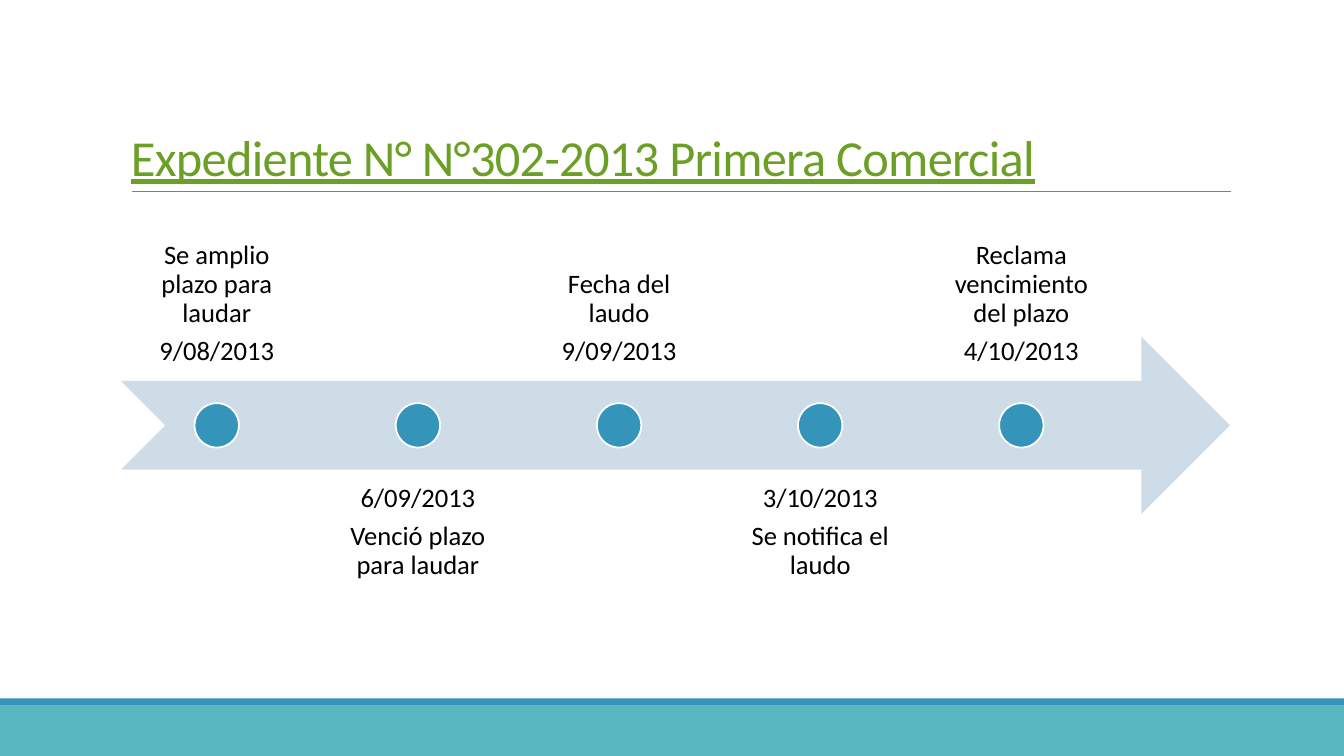
from pptx import Presentation
from pptx.dml.color import RGBColor
from pptx.enum import shapes, text
from pptx.oxml.ns import qn
from pptx.util import Inches, Pt

COLORS = {
    "band": "58B6C0",
    "accent": "3494BA",
    "arrow": "CEDCE7",
    "rule": "808080",
    "title": "6B9F25",
    "text": "000000",
    "outline": "FFFFFF",
}
KIND = shapes.MSO_SHAPE
ANCHOR = text.MSO_ANCHOR

# Date, event, and whether the label sits above the arrow
MILESTONES = [
    ("9/08/2013", "Se amplio plazo para laudar", True),
    ("6/09/2013", "Venció plazo para laudar", False),
    ("9/09/2013", "Fecha del laudo", True),
    ("3/10/2013", "Se notifica el laudo", False),
    ("4/10/2013", "Reclama vencimiento del plazo", True),
]
LEFT, LABEL_WIDTH, LABEL_HEIGHT = 1.2, 1.9, 1.76
STEP = LABEL_WIDTH * 1.05
ABOVE_TOP, BELOW_TOP = 2.02, 4.66
DOT_TOP, DOT_SIZE = 4, 0.44


def color(name):
    return RGBColor.from_string(COLORS[name])


def set_all(target, values):
    for name, value in values.items():
        setattr(target, name, value)


def add_figure(page, kind, area, fill, outline=None):
    figure = page.shapes.add_shape(kind, *map(Inches, area))
    figure.shadow.inherit = False
    figure.fill.solid()
    figure.fill.fore_color.rgb = color(fill)
    if outline:
        figure.line.color.rgb = color(outline)
        figure.line.width = Pt(1.25)
    else:
        figure.line.fill.background()


def add_rule(page, start, end):
    rule = page.shapes.add_connector(
        shapes.MSO_CONNECTOR.STRAIGHT, *map(Inches, start + end))
    rule.line.color.rgb = color("rule")
    rule.line.width = Pt(0.5)
    properties = rule._element.spPr
    properties.append(properties.makeelement(qn("a:effectLst"), {}))


def add_text(page, area, lines, frame_format, para_format, font_format, ink):
    box = page.shapes.add_textbox(*map(Inches, area))
    frame = box.text_frame
    set_all(frame, {"word_wrap": True, **frame_format})
    for index, line in enumerate(lines):
        para = frame.paragraphs[0] if index == 0 else frame.add_paragraph()
        set_all(para, para_format)
        if index:
            para.space_before = Pt(6.65)
        span = para.add_run()
        span.text = line
        set_all(span.font, {"name": "Calibri", **font_format})
        span.font.color.rgb = color(ink)
    return box


def add_title(page, wording):
    box = add_text(page, (LEFT, 0.31, 11, 1.59), [wording],
                   {"vertical_anchor": ANCHOR.BOTTOM}, {"line_spacing": 0.85},
                   {"size": Pt(36), "underline": True}, "title")
    span = box.text_frame.paragraphs[0].runs[0]
    span.font._element.set("spc", "-50")


def add_milestone(page, index, date, event, above):
    left = LEFT + index * STEP
    inset = Inches(0.15)
    frame_format = {
        "vertical_anchor": ANCHOR.BOTTOM if above else ANCHOR.TOP,
        "margin_left": inset, "margin_right": inset,
        "margin_top": inset, "margin_bottom": inset,
    }
    add_text(page,
             (left, ABOVE_TOP if above else BELOW_TOP, LABEL_WIDTH, LABEL_HEIGHT),
             [event, date] if above else [date, event], frame_format,
             {"alignment": text.PP_ALIGN.CENTER, "line_spacing": 0.9},
             {"size": Pt(19)}, "text")
    dot_left = left + (LABEL_WIDTH - DOT_SIZE) / 2
    add_figure(page, KIND.OVAL, (dot_left, DOT_TOP, DOT_SIZE, DOT_SIZE),
               "accent", "outline")


def main():
    deck = Presentation()
    set_all(deck, {"slide_width": Inches(13.33), "slide_height": Inches(7.5)})
    page = deck.slides.add_slide(deck.slide_layouts[6])

    # Footer bands
    add_figure(page, KIND.RECTANGLE, (0, 7, 13.33, 0.5), "band")
    add_figure(page, KIND.RECTANGLE, (0, 6.93, 13.33, 0.07), "accent")

    # Title and its rule
    add_rule(page, (1.31, 1.9), (12.21, 1.9))
    add_title(page, "Expediente N° N°302-2013 Primera Comercial")

    # Timeline
    add_figure(page, KIND.NOTCHED_RIGHT_ARROW, (LEFT, 3.34, 11, 1.76), "arrow")
    for index, milestone in enumerate(MILESTONES):
        add_milestone(page, index, *milestone)

    deck.save("out.pptx")


if __name__ == "__main__":
    main()
